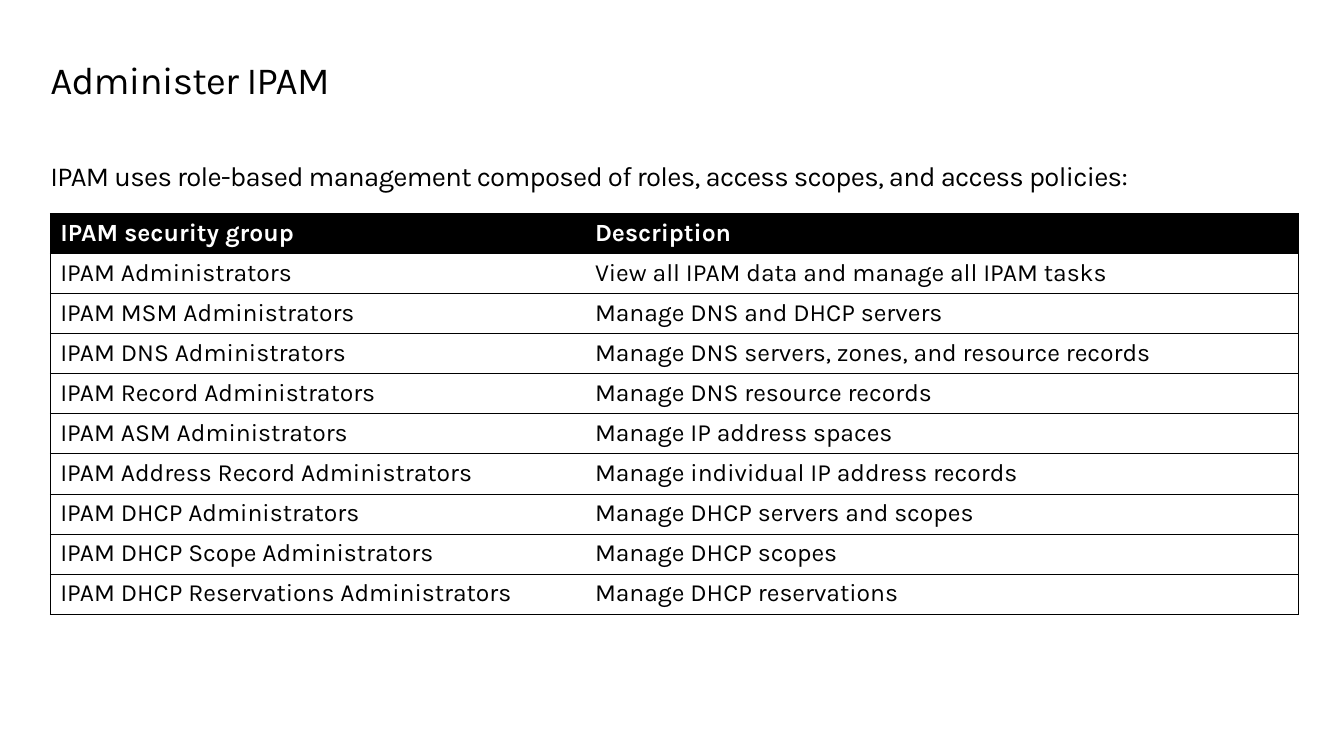
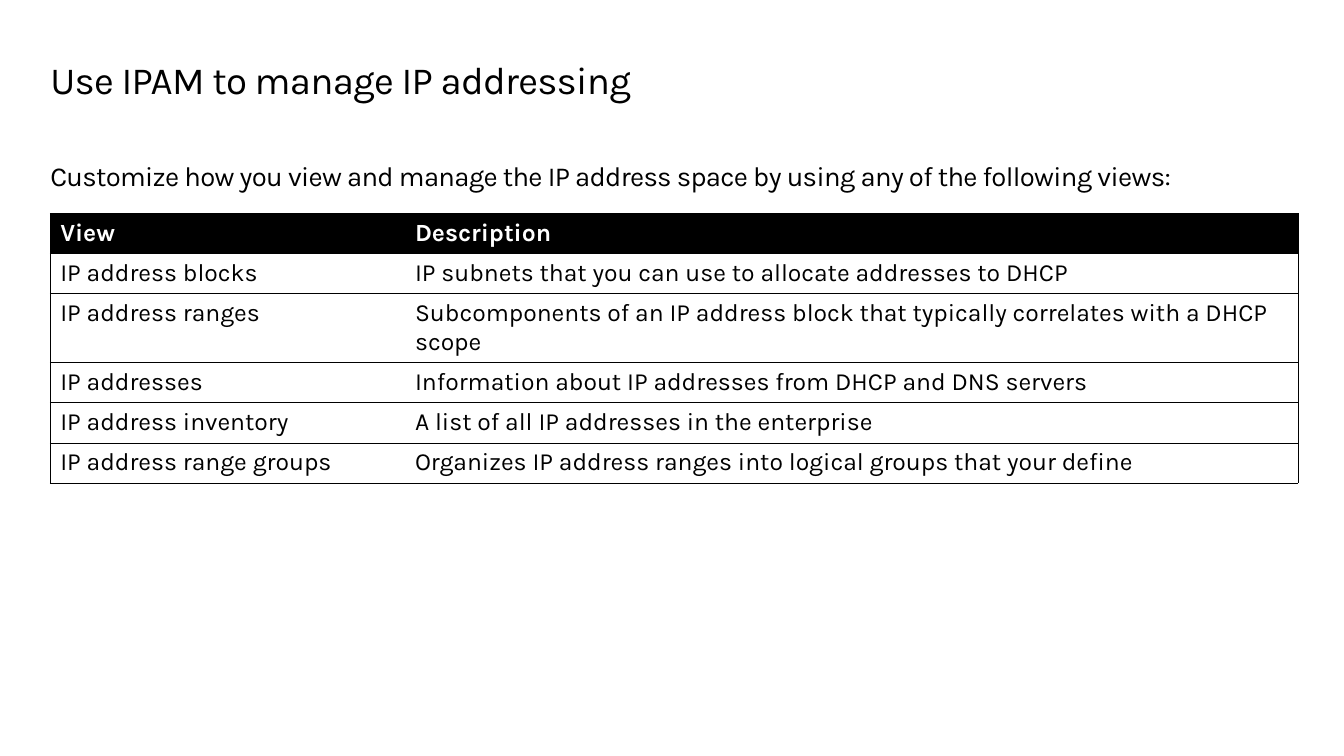
from dataclasses import dataclass

from lxml import etree
from pptx import Presentation
from pptx.dml.color import RGBColor
from pptx.enum.text import MSO_ANCHOR
from pptx.oxml.ns import qn
from pptx.slide import Slide
from pptx.table import Table
from pptx.util import Pt

TOP, BOTTOM = MSO_ANCHOR.TOP, MSO_ANCHOR.BOTTOM

# Shared style, lengths in points
FONT = "Karla"
BLACK, WHITE = "000000", "FFFFFF"
PAGE_W, PAGE_H = 979.2, 550.8
LEFT, WIDTH = 36.7, 908
GRID_TOP, GRID_W, ROW_H = 155.5, 909, 29.22
RULE = 0.75


@dataclass
class Style:
    top: float
    height: float
    size: float
    anchor: MSO_ANCHOR
    foot: float = 0
    before: float = 0
    line: float = 1.0


@dataclass
class Page:
    title: str
    intro: str
    split: float  # width of the first column
    rows: list[tuple[str, str]]


TITLE = Style(44.6, 32.4, 28, TOP, line=0.9)
INTRO = Style(90, 53.3, 20, BOTTOM, foot=3.6, before=12)

PAGES = [
    Page(
        "Administer IPAM",
        "IPAM uses role-based management composed of roles, access scopes, and access policies:",
        389.6,
        [
            ("IPAM security group", "Description"),
            ("IPAM Administrators", "View all IPAM data and manage all IPAM tasks"),
            ("IPAM MSM Administrators", "Manage DNS and DHCP servers"),
            ("IPAM DNS Administrators", "Manage DNS servers, zones, and resource records"),
            ("IPAM Record Administrators", "Manage DNS resource records"),
            ("IPAM ASM Administrators", "Manage IP address spaces"),
            ("IPAM Address Record Administrators", "Manage individual IP address records"),
            ("IPAM DHCP Administrators", "Manage DHCP servers and scopes"),
            ("IPAM DHCP Scope Administrators", "Manage DHCP scopes"),
            ("IPAM DHCP Reservations Administrators", "Manage DHCP reservations"),
        ],
    ),
    Page(
        "Use IPAM to manage IP addressing",
        "Customize how you view and manage the IP address space by using any of the following views:",
        258.5,
        [
            ("View", "Description"),
            ("IP address blocks", "IP subnets that you can use to allocate addresses to DHCP"),
            ("IP address ranges", "Subcomponents of an IP address block that typically correlates with a DHCP scope"),
            ("IP addresses", "Information about IP addresses from DHCP and DNS servers"),
            ("IP address inventory", "A list of all IP addresses in the enterprise"),
            ("IP address range groups", "Organizes IP address ranges into logical groups that your define"),
        ],
    ),
]


def paint(target, color: str) -> None:
    """Give a fill or line fill one solid colour."""
    target.solid()
    target.fore_color.rgb = RGBColor.from_string(color)


def set_font(para, size: float, color: str, bold: bool = False) -> None:
    font = para.font
    font.name, font.size, font.bold = FONT, Pt(size), bold
    paint(font.fill, color)


def add_text(slide: Slide, text: str, style: Style) -> None:
    box = slide.shapes.add_textbox(Pt(LEFT), Pt(style.top), Pt(WIDTH), Pt(style.height))
    frame = box.text_frame
    frame.word_wrap = True
    frame.vertical_anchor = style.anchor
    frame.margin_left = frame.margin_top = 0
    frame.margin_right, frame.margin_bottom = Pt(7.2), Pt(style.foot)
    para = frame.paragraphs[0]
    para.text = text
    para.line_spacing, para.space_before = style.line, Pt(style.before)
    set_font(para, style.size, BLACK)
    # Tighter letter spacing, in hundredths of a point
    para._p.find(".//" + qn("a:defRPr")).set("spc", "-50")


def add_edge(cell, side: str, shown: bool) -> None:
    props = cell._tc.get_or_add_tcPr()
    edge = etree.SubElement(props, qn(f"a:ln{side}"), w=str(Pt(RULE)))
    if shown:
        fill = etree.SubElement(edge, qn("a:solidFill"))
        etree.SubElement(fill, qn("a:srgbClr"), val=BLACK)
    else:
        etree.SubElement(edge, qn("a:noFill"))


def fill_cell(table: Table, row: int, col: int, text: str) -> None:
    cell = table.cell(row, col)
    head = row == 0
    cell.text = text
    set_font(cell.text_frame.paragraphs[0], 18, WHITE if head else BLACK, head)
    # Rules run round the table and between rows, not between columns
    for side, shown in (("L", col == 0), ("R", col == 1), ("T", True), ("B", True)):
        add_edge(cell, side, shown)
    paint(cell.fill, BLACK if head else WHITE)


def add_grid(slide: Slide, page: Page) -> None:
    count = len(page.rows)
    table = slide.shapes.add_table(
        count, 2, Pt(LEFT), Pt(GRID_TOP), Pt(GRID_W), Pt(ROW_H * count)
    ).table
    table.horz_banding = False
    for col, width in enumerate((page.split, GRID_W - page.split)):
        table.columns[col].width = Pt(width)
    for row, texts in enumerate(page.rows):
        table.rows[row].height = Pt(ROW_H)
        for col, text in enumerate(texts):
            fill_cell(table, row, col, text)


def main() -> None:
    deck = Presentation()
    deck.slide_width, deck.slide_height = Pt(PAGE_W), Pt(PAGE_H)
    blank = deck.slide_layouts[6]
    for page in PAGES:
        slide = deck.slides.add_slide(blank)
        add_text(slide, page.title, TITLE)
        add_grid(slide, page)
        add_text(slide, page.intro, INTRO)
    deck.save("out.pptx")


if __name__ == "__main__":
    main()
